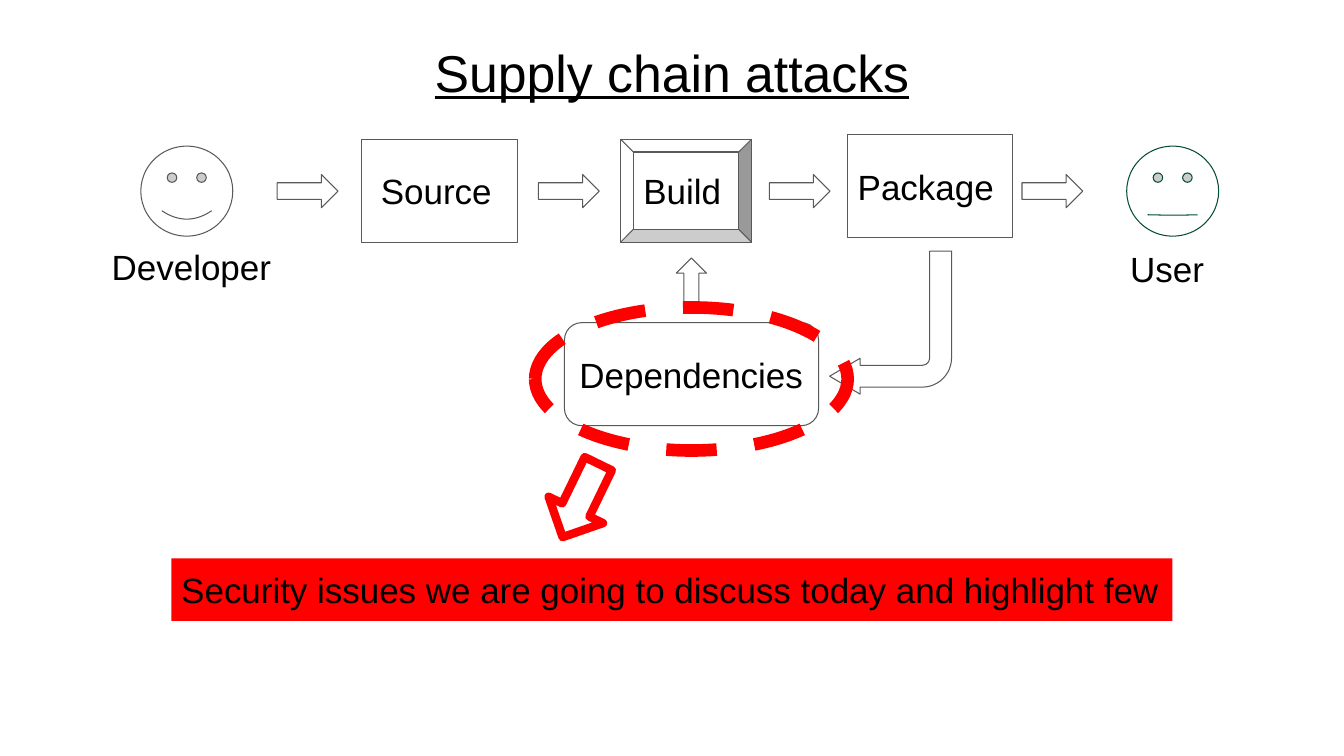
"""Build the slide on supply chain attacks."""
from dataclasses import dataclass

from pptx import Presentation
from pptx.dml.color import RGBColor
from pptx.enum import dml, shapes, text
from pptx.util import Pt


@dataclass(frozen=True)
class Theme:
    font: str = "Arial"
    title_size: float = 37
    body_size: float = 25
    ink: str = "000000"
    paper: str = "FFFFFF"
    outline: str = "595959"
    user_outline: str = "044C34"
    alert: str = "FF0000"
    thin: float = 0.75
    inset: float = 7.2


THEME = Theme()
SHAPE = shapes.MSO_SHAPE
ANCHOR = text.MSO_ANCHOR
ALIGN = text.PP_ALIGN


def write(box, words, size=THEME.body_size, inset=THEME.inset, indent=None,
          anchor=ANCHOR.TOP, align=ALIGN.LEFT, underline=None, spacing=None):
    frame = box.text_frame
    frame.word_wrap = True
    frame.vertical_anchor = anchor
    frame.margin_top = frame.margin_bottom = frame.margin_right = Pt(inset)
    frame.margin_left = Pt(inset if indent is None else indent)
    para = frame.paragraphs[0]
    para.alignment = align
    para.line_spacing = spacing
    span = para.add_run()
    span.text = words
    span.font.name = THEME.font
    span.font.size = Pt(size)
    span.font.underline = underline
    span.font.color.rgb = RGBColor.from_string(THEME.ink)


def add_label(page, words, left, top, width, height, **style):
    box = page.shapes.add_textbox(Pt(left), Pt(top), Pt(width), Pt(height))
    write(box, words, **style)


def add_figure(page, kind, left, top, width, height, fill=THEME.paper,
               line=THEME.outline, weight=THEME.thin, adjust=(), rotation=0):
    figure = page.shapes.add_shape(kind, Pt(left), Pt(top), Pt(width), Pt(height))
    figure.shadow.inherit = False
    figure.rotation = rotation
    for index, value in enumerate(adjust):
        figure.adjustments[index] = value
    if fill:
        figure.fill.solid()
        figure.fill.fore_color.rgb = RGBColor.from_string(fill)
    else:
        figure.fill.background()
    if line:
        figure.line.color.rgb = RGBColor.from_string(line)
        figure.line.width = Pt(weight)
    else:
        figure.line.fill.background()
    return figure


def add_stage(page, kind, words, left, top, width, indent=None, adjust=()):
    stage = add_figure(page, kind, left, top, width, 73.6, adjust=adjust)
    write(stage, words, indent=indent, anchor=ANCHOR.MIDDLE)


def add_person(page, left, mouth, line):
    add_figure(page, SHAPE.SMILEY_FACE, left, 104.4, 65.7, 64.3, line=line, adjust=[mouth])


def add_chain(page):
    add_stage(page, SHAPE.RECTANGLE, "Package", 605.6, 96.2, 117.7)
    add_stage(page, SHAPE.ROUNDED_RECTANGLE, "Dependencies", 403.2, 230.5, 181.5, adjust=[0.167])
    add_stage(page, SHAPE.BEVEL, "Build", 443.3, 99.4, 93.6, adjust=[0.125])
    add_stage(page, SHAPE.RECTANGLE, "Source", 258.2, 99.4, 111.2, indent=13.9)
    add_person(page, 100.6, 0.047, THEME.outline)
    add_person(page, 804.8, 0.002, THEME.user_outline)
    add_label(page, "Developer", 72.7, 168.5, 128.9, 44.6)
    add_label(page, "User", 786.2, 169.6, 101.5, 44.6, indent=21.1)
    for left in (198, 384.6, 549.5, 730):
        add_figure(page, SHAPE.RIGHT_ARROW, left, 124.6, 43.4, 23.8)
    add_figure(page, SHAPE.UP_ARROW, 483.1, 184.3, 21.6, 35.3)
    add_figure(page, SHAPE.BENT_ARROW, 592.6, 179.3, 87.1, 102.2,
               adjust=[0.179, 0.147, 0.25, 0.24], rotation=180)


def add_warning(page):
    ring = add_figure(page, SHAPE.OVAL, 382.3, 219.6, 223.2, 102.2,
                      fill=None, line=THEME.alert, weight=9)
    ring.line.dash_style = dml.MSO_LINE.DASH
    add_figure(page, SHAPE.UP_ARROW, 393, 328.3, 43.2, 58.3,
               fill=None, line=THEME.alert, weight=6, rotation=205.9)
    banner = add_figure(page, SHAPE.RECTANGLE, 122.4, 398.9, 715, 44.6,
                        fill=THEME.alert, line=None)
    write(banner, "Security issues we are going to discuss today and highlight few")


def main():
    deck = Presentation()
    deck.slide_width, deck.slide_height = Pt(960), Pt(540)
    page = deck.slides.add_slide(deck.slide_layouts[6])
    add_label(page, "Supply chain attacks", 72, 22.3, 816, 64.1, size=THEME.title_size,
              inset=0, anchor=ANCHOR.MIDDLE, align=ALIGN.CENTER, underline=True, spacing=0.86)
    add_chain(page)
    add_warning(page)
    deck.save("out.pptx")


if __name__ == "__main__":
    main()
